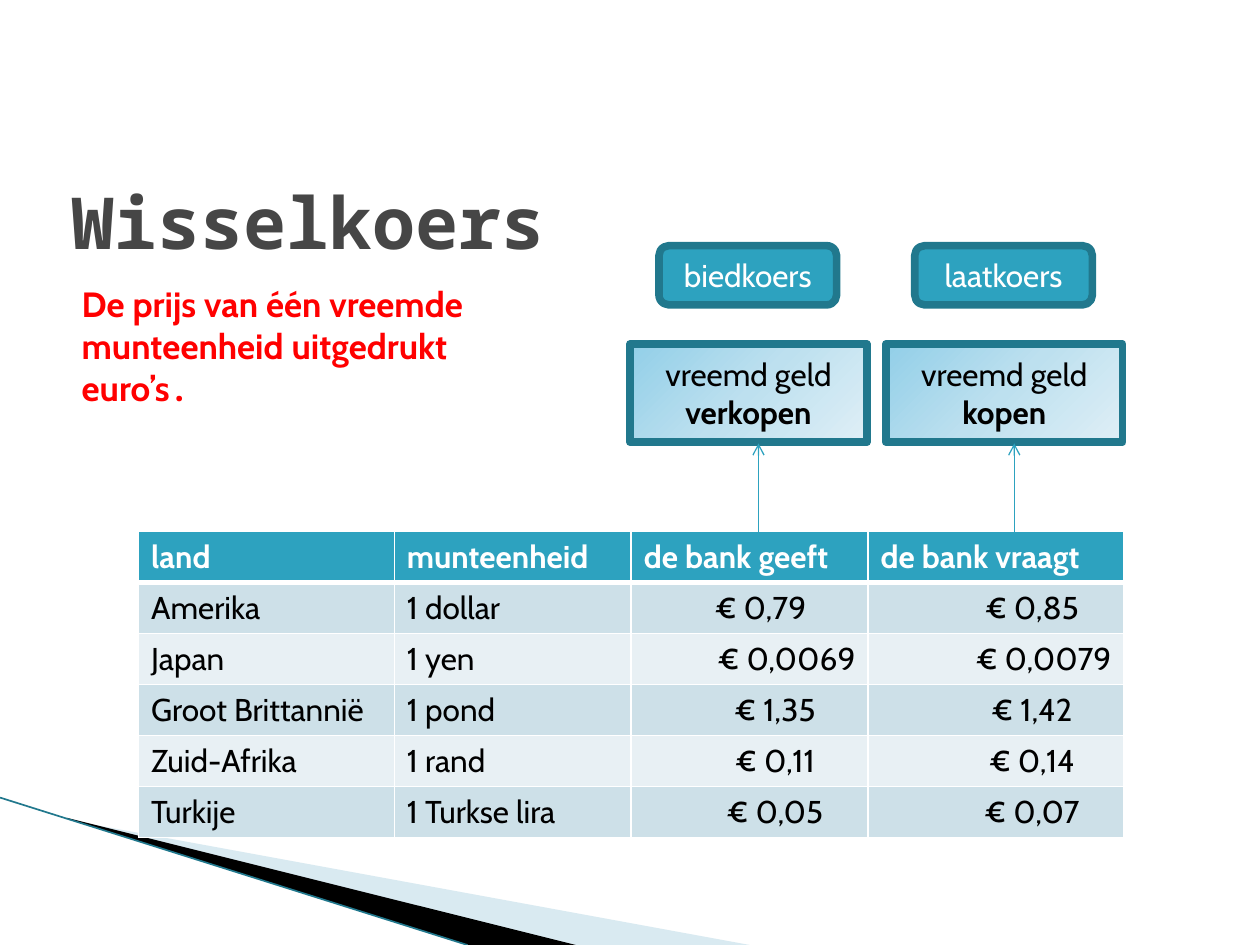
"""Build the Wisselkoers slide with an exchange-rate table."""
from copy import deepcopy

from lxml import etree
from pptx import Presentation
from pptx.dml.color import RGBColor
from pptx.enum.shapes import MSO_CONNECTOR, MSO_SHAPE
from pptx.enum.text import MSO_ANCHOR, PP_ALIGN
from pptx.oxml.ns import qn
from pptx.util import Inches, Pt

LEFT, CENTER, RIGHT = PP_ALIGN.LEFT, PP_ALIGN.CENTER, PP_ALIGN.RIGHT
TOP, MIDDLE = MSO_ANCHOR.TOP, MSO_ANCHOR.MIDDLE
RECTANGLE, ROUNDED = MSO_SHAPE.RECTANGLE, MSO_SHAPE.FLOWCHART_ALTERNATE_PROCESS
STRAIGHT = MSO_CONNECTOR.STRAIGHT
BODY_FONT, TITLE_FONT = "Cabin", "Noto Sans Mono"
COLORS = {
    "white": "FFFFFF", "black": "000000", "title": "464646", "red": "FF0000",
    "teal": "2DA2BF", "dark_teal": "21788D", "swoosh": "A0CBDC",
    "band_dark": "CDE0E8", "band_light": "E8F0F4",
    "gradient_start": "92CFE8", "gradient_middle": "BDE0EF", "gradient_end": "DFEFF6",
}


def rgb(name):
    return RGBColor.from_string(COLORS[name])


def add_text(frame, text, size=18, font=BODY_FONT, color="black", bold=False,
             align=LEFT, anchor=TOP, new_paragraph=False, same_line=False):
    frame.word_wrap = True
    frame.vertical_anchor = anchor
    paragraph = frame.add_paragraph() if new_paragraph else frame.paragraphs[-1]
    if not same_line:
        paragraph.alignment = align
    run = paragraph.add_run()
    run.text = text
    run.font.size = Pt(size)
    run.font.name = font
    run.font.bold = bold
    run.font.color.rgb = rgb(color)


presentation = Presentation()
presentation.slide_width, presentation.slide_height = Inches(10), Inches(7.5)
slide = presentation.slides.add_slide(presentation.slide_layouts[6])
shapes = slide.shapes

swooshes = [
    ("swoosh", 40, [(0.55, 6.51), (5.95, 7.5), (4.56, 7.5), (0.55, 6.5)]),
    ("black", 100, [(0.53, 6.49), (4.57, 7.5), (3.72, 7.5), (0.54, 6.5)]),
]
for color, opacity, points in swooshes:
    corners = [(Inches(x), Inches(y)) for x, y in points]
    builder = shapes.build_freeform(*corners[0])
    builder.add_line_segments(corners[1:], close=True)
    shape = builder.convert_to_shape()
    shape.shadow.inherit = False
    shape.fill.solid()
    shape.fill.fore_color.rgb = rgb(color)
    shape.line.fill.background()
    if opacity < 100:
        fill_color = shape._element.spPr.find(".//" + qn("a:srgbClr"))
        etree.SubElement(fill_color, qn("a:alpha"), val=str(opacity * 1000))

title = shapes.add_textbox(Inches(0.47), Inches(1.17), Inches(9), Inches(1.17))
add_text(title.text_frame, "Wisselkoers", size=41, font=TITLE_FONT, color="title",
         bold=True, anchor=MIDDLE)

headings = ["land", "munteenheid", "de bank geeft", "de bank vraagt"]
rates = [
    ("Amerika", "1 dollar", "€ 0,79", "€ 0,85"),
    ("Japan", "1 yen", "€ 0,0069", "€ 0,0079"),
    ("Groot Brittannië", "1 pond", "€ 1,35", "€ 1,42"),
    ("Zuid-Afrika", "1 rand", "€ 0,11", "€ 0,14"),
    ("Turkije", "1 Turkse lira", "€ 0,05", "€ 0,07"),
]
rows = [headings, *rates]
table_height = Inches(2.43)
table = shapes.add_table(len(rows), len(headings), Inches(1.1), Inches(4.22),
                         Inches(7.81), table_height).table
for column, width in zip(table.columns, [2.03, 1.88, 1.88, 2.03]):
    column.width = Inches(width)
for row_index, values in enumerate(rows):
    table.rows[row_index].height = table_height // len(rows)
    header = row_index == 0
    band = "teal" if header else "band_dark" if row_index % 2 else "band_light"
    for column_index, value in enumerate(values):
        cell = table.cell(row_index, column_index)
        align = LEFT
        if not header and column_index > 1:
            align = RIGHT if values[0] == "Japan" else CENTER
        if align == CENTER:
            cell.margin_left = Inches(0.5 if column_index == 2 else 0.67)
            if value == "€ 0,79":
                cell.margin_left = Inches(0.27)
        add_text(cell.text_frame, value, color="white" if header else "black",
                 bold=header, align=align)
        properties = cell._tc.get_or_add_tcPr()
        for side in ("lnL", "lnR", "lnT", "lnB"):
            thick = (row_index, side) in ((0, "lnB"), (1, "lnT"))
            border = etree.SubElement(properties, qn("a:" + side),
                                      w=str(Pt(3 if thick else 1)))
            border_fill = etree.SubElement(border, qn("a:solidFill"))
            etree.SubElement(border_fill, qn("a:srgbClr"), val=COLORS["white"])
        cell.fill.solid()
        cell.fill.fore_color.rgb = rgb(band)

lines = [(0, 6.33, 3.71, 7.5, "dark_teal", 0.95, False)]
for column_index, (rate_name, action) in enumerate(
        [("biedkoers", "verkopen"), ("laatkoers", "kopen")]):
    offset = 2.03 * column_index
    lines.append((6.02 + offset, 4.22, 6.02 + offset, 3.52, "teal", 0.75, True))
    action_box = shapes.add_shape(RECTANGLE, Inches(5 + offset), Inches(2.73),
                                  Inches(1.88), Inches(0.78))
    action_box.fill.gradient()
    action_box.fill.gradient_angle = 315
    stops = action_box.fill.gradient_stops
    stops[0].color.rgb = rgb("gradient_start")
    stops[1].color.rgb = rgb("gradient_end")
    stop_list = action_box._element.spPr.find(".//" + qn("a:gsLst"))
    middle_stop = deepcopy(stop_list[0])
    middle_stop.set("pos", "50000")
    middle_stop[0].set("val", COLORS["gradient_middle"])
    stop_list.insert(1, middle_stop)
    add_text(action_box.text_frame, "vreemd geld ", align=CENTER, anchor=MIDDLE)
    add_text(action_box.text_frame, action, bold=True, anchor=MIDDLE, same_line=True)

    rate_box = shapes.add_shape(ROUNDED, Inches(5.23 + offset), Inches(1.95),
                                Inches(1.41), Inches(0.47))
    rate_box.fill.solid()
    rate_box.fill.fore_color.rgb = rgb("teal")
    add_text(rate_box.text_frame, rate_name, color="white", align=CENTER, anchor=MIDDLE)
    for box in (action_box, rate_box):
        box.shadow.inherit = False
        box.line.color.rgb = rgb("dark_teal")
        box.line.width = Pt(4.33)

for start_x, start_y, end_x, end_y, color, width, arrow in lines:
    connector = shapes.add_connector(STRAIGHT, Inches(start_x), Inches(start_y),
                                     Inches(end_x), Inches(end_y))
    connector.line.color.rgb = rgb(color)
    connector.line.width = Pt(width)
    if arrow:
        etree.SubElement(connector.line._get_or_add_ln(), qn("a:tailEnd"), type="arrow")
    etree.SubElement(connector._element.spPr, qn("a:effectLst"))

definition = shapes.add_textbox(Inches(0.55), Inches(2.19), Inches(4.45), Inches(1.11))
add_text(definition.text_frame, "De prijs van één vreemde munteenheid uitgedrukt",
         size=20, color="red", bold=True)
add_text(definition.text_frame, "euro’s", size=20, color="red", bold=True,
         new_paragraph=True)
add_text(definition.text_frame, ".", font=TITLE_FONT, color="red", bold=True,
         same_line=True)

presentation.save("out.pptx")
